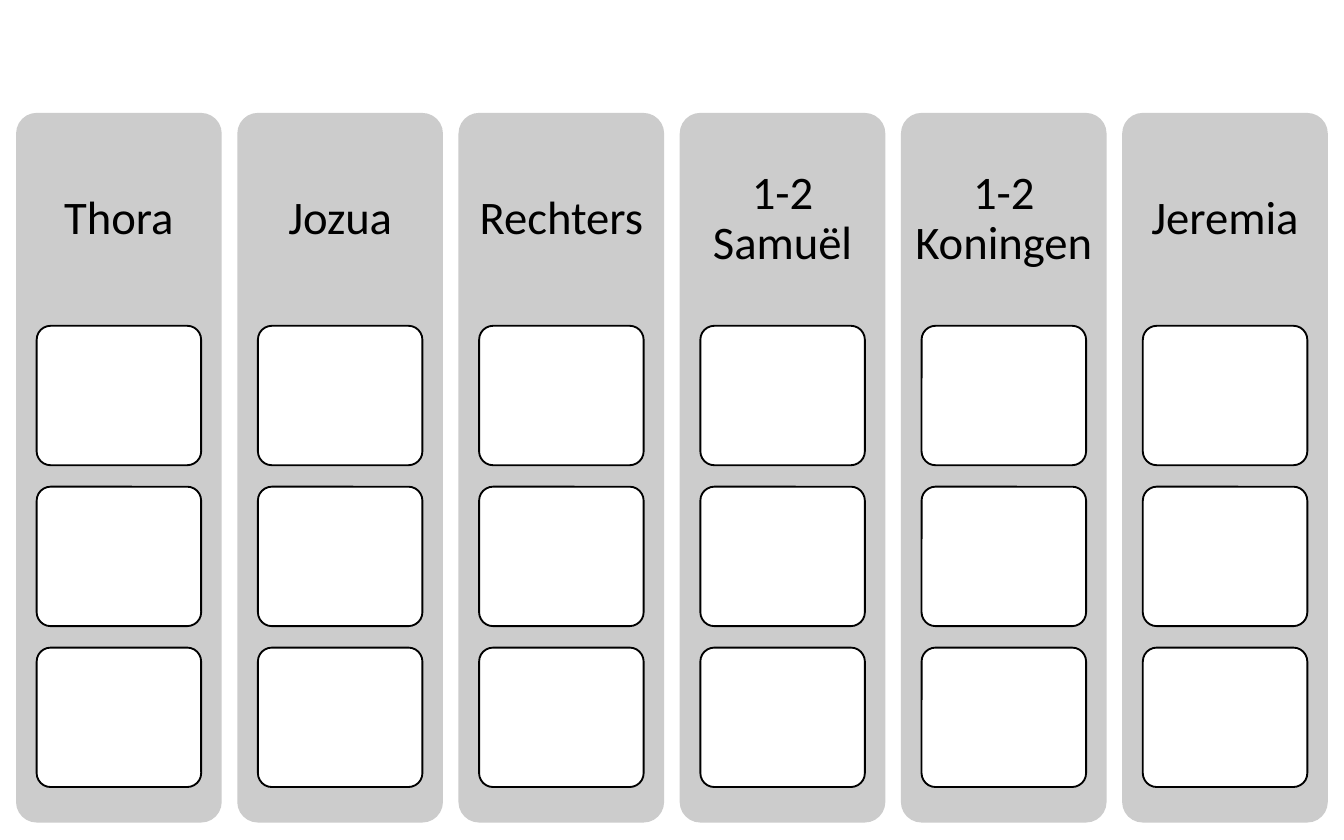
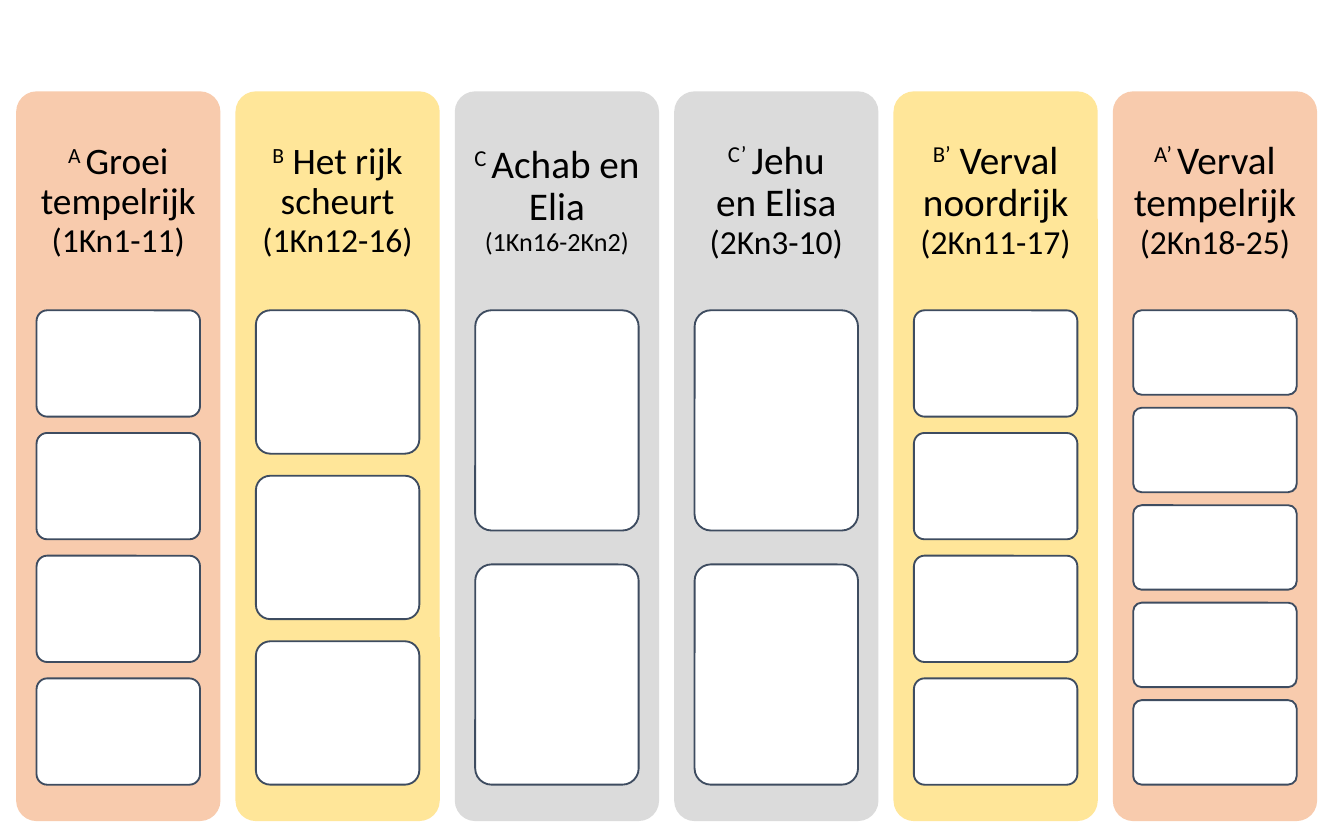
from lxml import etree
from pptx import Presentation
from pptx import util as u
from pptx.dml.color import RGBColor
from pptx.enum import shapes, text
from pptx.oxml.ns import qn

# Shared style
BLACK = RGBColor(0x00, 0x00, 0x00)
WHITE = RGBColor(0xFF, 0xFF, 0xFF)
SILVER = RGBColor(0xCC, 0xCC, 0xCC)
GREY = RGBColor(0xDB, 0xDB, 0xDB)
PEACH = RGBColor(0xF8, 0xCB, 0xAD)
YELLOW = RGBColor(0xFF, 0xE6, 0x99)
SLATE = RGBColor(0x3E, 0x4C, 0x60)
FONT = "Calibri"

# Proportions of a column
HEADER_SHARE = 0.3
CARDS_SHARE = 0.65
CARD_WIDTH_SHARE = 0.8
CARD_GAP_SHARE = 0.154  # gap between cards, as a share of card height

BIBLE_BOOKS = ["Thora", "Jozua", "Rechters", "1-2 Samuël", "1-2 Koningen", "Jeremia"]

# Mark, title, reference, title size, reference size, inset, fill, number of cards
KINGS_PARTS = [
    ("A ", "Groei tempelrijk\n", "(1Kn1-11)", 20, 18, 0.08, PEACH, 4),
    ("B", " Het rijk scheurt ", "(1Kn12-16)", 20, 18, 0.08, YELLOW, 3),
    ("C ", "Achab en Elia\n", "(1Kn16-2Kn2)", 21, 14, 0.09, GREY, 2),
    ("C’ ", "Jehu\nen Elisa\n", "(2Kn3-10)", 21, 18, 0.09, GREY, 2),
    ("B’", " Verval noordrijk ", "(2Kn11-17)", 21, 18, 0.09, YELLOW, 4),
    ("A’ ", "Verval tempelrijk ", "(2Kn18-25)", 21, 18, 0.09, PEACH, 5),
]


def apply_format(target, values):
    for name, value in values.items():
        setattr(target, name, value)


def add_rounded(slide, left, top, width, height, fill, line=None):
    shape = slide.shapes.add_shape(
        shapes.MSO_SHAPE.ROUNDED_RECTANGLE,
        *(u.Inches(length) for length in (left, top, width, height)))
    shape.adjustments[0] = 0.1
    shape.shadow.inherit = False
    shape.fill.solid()
    shape.fill.fore_color.rgb = fill
    if line is None:
        shape.line.fill.background()
    else:
        shape.line.color.rgb = line
        shape.line.width = u.Pt(1)


def add_run(paragraph, content, size, superscript=False):
    """Add text to the paragraph, with a line break at each newline."""
    for index, part in enumerate(content.split("\n")):
        if index:
            paragraph.add_line_break()
        if not part:
            continue
        run = paragraph.add_run()
        run.text = part
        apply_format(run.font, {"name": FONT, "size": u.Pt(size)})
        run.font.color.rgb = BLACK
        if superscript:
            run._r.get_or_add_rPr().set("baseline", "30000")


def add_header(slide, left, top, width, height, runs, inset):
    box = slide.shapes.add_textbox(
        *(u.Inches(length) for length in (left, top, width, height)))
    margins = {f"margin_{side}": u.Inches(inset)
               for side in ("left", "top", "right", "bottom")}
    apply_format(box.text_frame, {
        "word_wrap": True, "vertical_anchor": text.MSO_ANCHOR.MIDDLE, **margins})
    paragraph = box.text_frame.paragraphs[0]
    apply_format(paragraph, {"alignment": text.PP_ALIGN.CENTER, "line_spacing": 0.9})
    space_after = etree.SubElement(paragraph._p.get_or_add_pPr(), qn("a:spcAft"))
    etree.SubElement(space_after, qn("a:spcPct")).set("val", "35000")
    for run in runs:
        add_run(paragraph, *run)


def add_column(slide, left, top, width, height, column, line):
    """Draw a band with its header and a stack of empty cards."""
    runs, inset, fill, card_count = column
    header_height = height * HEADER_SHARE
    add_rounded(slide, left, top, width, height, fill)
    add_header(slide, left, top, width, header_height, runs, inset)

    card_width = width * CARD_WIDTH_SHARE
    card_left = left + (width - card_width) / 2
    card_height = height * CARDS_SHARE / (card_count + (card_count - 1) * CARD_GAP_SHARE)
    for row in range(card_count):
        card_top = top + header_height + row * card_height * (1 + CARD_GAP_SHARE)
        add_rounded(slide, card_left, card_top, card_width, card_height, WHITE, line)


def add_column_slide(presentation, columns, first_left, last_left, top, width, height, line):
    slide = presentation.slides.add_slide(presentation.slide_layouts[6])
    pitch = (last_left - first_left) / (len(columns) - 1)
    for index, column in enumerate(columns):
        add_column(slide, first_left + index * pitch, top, width, height, column, line)


def main():
    presentation = Presentation()
    apply_format(presentation, {
        "slide_width": u.Inches(10), "slide_height": u.Inches(6.25)})

    # Bible books
    book_columns = [([(book, 25)], 0.1, SILVER, 3) for book in BIBLE_BOOKS]
    add_column_slide(presentation, book_columns, 0.12, 8.35, 0.84, 1.53, 5.28, BLACK)

    # Mirrored structure of Kings
    kings_columns = [
        ([(mark, size, True), (title, size), (reference, reference_size)],
         inset, fill, card_count)
        for mark, title, reference, size, reference_size, inset, fill, card_count
        in KINGS_PARTS]
    add_column_slide(presentation, kings_columns, 0.12, 8.28, 0.68, 1.52, 5.43, SLATE)

    presentation.save("out.pptx")


if __name__ == "__main__":
    main()
